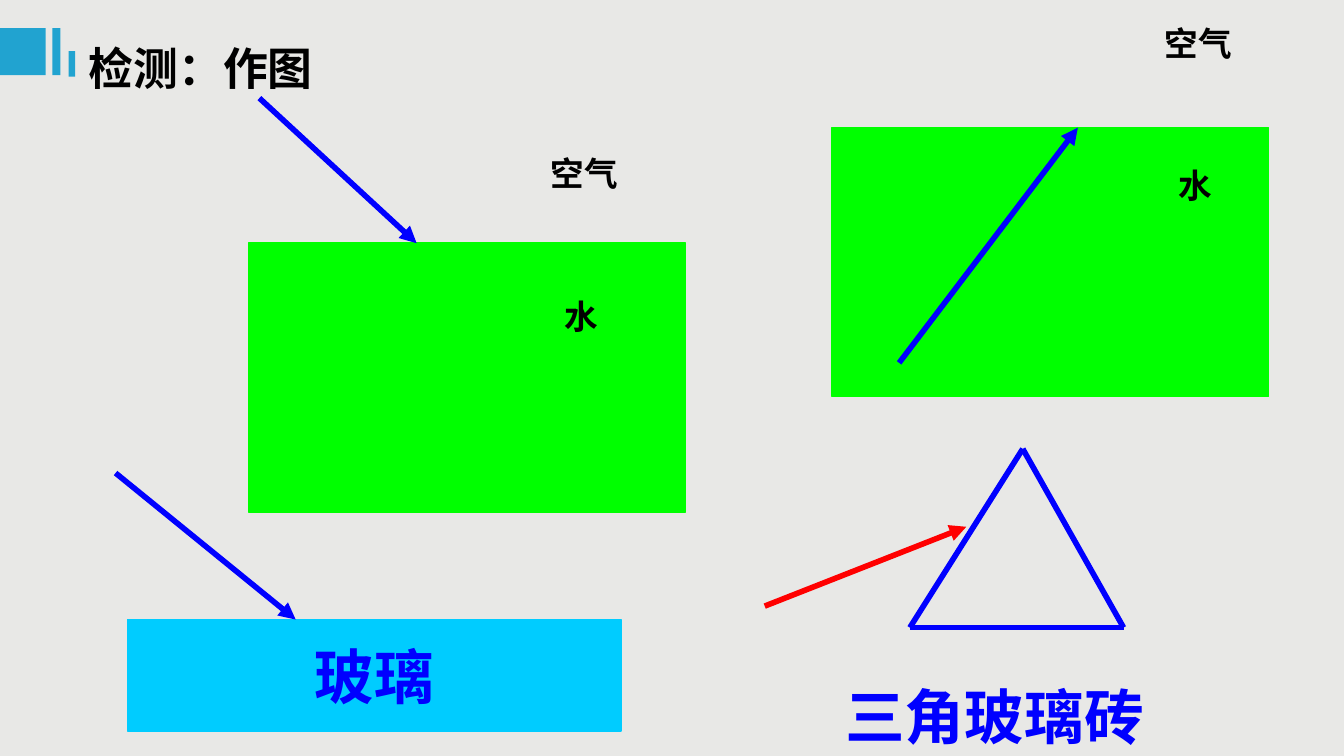
"""Build a slide of refraction drawing exercises."""
from dataclasses import dataclass
from itertools import combinations

from lxml import etree
from pptx import Presentation
from pptx import util as u
from pptx.dml.color import RGBColor
from pptx.enum import shapes, text
from pptx.oxml.ns import qn


@dataclass(frozen=True)
class Theme:
    """Colours, fonts and type sizes of the slide."""
    background: str = "E8E8E6"
    accent: str = "21A3D0"
    ink: str = "000000"
    water: str = "00FF00"
    glass: str = "00CCFF"
    blue: str = "0000FF"
    red: str = "FF0000"
    title_font: str = "Noto Sans CJK SC"
    font: str = "Arial"
    title_size: int = 24
    label_size: int = 18
    name_size: int = 32
    ray_width: int = 3
    edge_width: float = 0.75


THEME = Theme()
COLUMNS, ROWS = 100, 56.25
WIDTH = u.Inches(10)
HEIGHT = WIDTH * 9 // 16


def grid(column, row):
    """Turn a column and a row into slide lengths."""
    return round(WIDTH * column / COLUMNS), round(HEIGHT * row / ROWS)


def style_text(shape, words, size, color, font=THEME.font, align=text.PP_ALIGN.LEFT):
    """Write one bold paragraph into a shape."""
    frame = shape.text_frame
    frame.text = words
    paragraph = frame.paragraphs[0]
    paragraph.alignment = align
    run = paragraph.runs[0]
    run.font.size = u.Pt(size)
    run.font.bold = True
    run.font.name = font
    run.font.color.rgb = RGBColor.from_string(color)
    return run


def add_title(slide, words, box):
    """Place the title placeholder and set its East Asian font."""
    title = slide.shapes.title
    title.left, title.top = grid(*box[:2])
    title.width, title.height = grid(*box[2:])
    run = style_text(title, words, THEME.title_size, THEME.ink, THEME.title_font)
    title.text_frame.vertical_anchor = text.MSO_ANCHOR.TOP
    east_asian = etree.SubElement(run.font._element, qn("a:ea"))
    east_asian.set("typeface", THEME.title_font)


def add_block(slide, box, color, outlined=True):
    """Add a filled rectangle, with an edge of the same colour if outlined."""
    shape = slide.shapes.add_shape(
        shapes.MSO_SHAPE.RECTANGLE, *grid(*box[:2]), *grid(*box[2:]))
    shape.shadow.inherit = False
    shape.fill.solid()
    shape.fill.fore_color.rgb = RGBColor.from_string(color)
    if outlined:
        shape.line.color.rgb = RGBColor.from_string(color)
        shape.line.width = u.Pt(THEME.edge_width)
    else:
        shape.line.fill.background()
    return shape


def add_label(slide, words, box, size=THEME.label_size, color=THEME.ink):
    """Add an unwrapped text label."""
    label = slide.shapes.add_textbox(*grid(*box[:2]), *grid(*box[2:]))
    style_text(label, words, size, color)
    label.text_frame.word_wrap = False
    label.text_frame.auto_size = text.MSO_AUTO_SIZE.SHAPE_TO_FIT_TEXT


def add_line(slide, start, end, color=THEME.blue, arrow=True):
    """Draw a straight line, with an arrowhead at its end if wanted."""
    line = slide.shapes.add_connector(
        shapes.MSO_CONNECTOR.STRAIGHT, *grid(*start), *grid(*end))
    line.line.color.rgb = RGBColor.from_string(color)
    line.line.width = u.Pt(THEME.ray_width)
    properties = line._element.spPr
    if arrow:
        etree.SubElement(properties.find(qn("a:ln")), qn("a:tailEnd"), type="triangle")
    etree.SubElement(properties, qn("a:effectLst"))


def add_water_tank(slide, corner, air_corner, ray):
    """Add a water tank with its two medium labels and a light ray."""
    add_block(slide, (*corner, 32.5, 20), THEME.water)
    column, row = air_corner
    add_label(slide, "空气", (column, row, 7, 4))
    add_label(slide, "水", (column + 1, row + 10.6, 4.5, 4))
    add_line(slide, *ray)


def add_glass_slab(slide):
    """Add the glass slab and the ray that meets it."""
    slab = add_block(slide, (9.5, 46.1, 36.7, 8.3), THEME.glass)
    style_text(slab, "玻璃", THEME.name_size, THEME.blue, align=text.PP_ALIGN.CENTER)
    slab.text_frame.word_wrap = False
    slab.text_frame.vertical_anchor = text.MSO_ANCHOR.MIDDLE
    add_line(slide, (8.6, 35.2), (22, 46.1))


def add_prism(slide):
    """Add the triangular prism, its name and its red ray."""
    corners = (76.1, 33.4), (67.7, 46.7), (83.6, 46.7)
    for start, end in combinations(corners, 2):
        add_line(slide, start, end, arrow=False)
    add_label(slide, "三角玻璃砖", (61.9, 50.1, 24.4, 6.3), THEME.name_size, THEME.blue)
    add_line(slide, (56.9, 45.1), (71.9, 39.2), THEME.red)


def main():
    """Build and save the slide."""
    presentation = Presentation()
    presentation.slide_width, presentation.slide_height = WIDTH, HEIGHT
    slide = presentation.slides.add_slide(presentation.slide_layouts[5])
    slide.background.fill.solid()
    slide.background.fill.fore_color.rgb = RGBColor.from_string(THEME.background)
    for bar in ((0, 2.1, 3.4, 3.5), (3.9, 2.1, 0.6, 3.5), (5.1, 3.8, 0.5, 1.9)):
        add_block(slide, bar, THEME.accent, outlined=False)
    add_title(slide, "检测：作图", (5.6, 2.5, 22.7, 5))
    add_water_tank(slide, (18.5, 18.1), (40, 10.9), ((19.3, 7.3), (31, 18.1)))
    add_water_tank(slide, (61.9, 9.5), (85.7, 1.2), ((66.9, 27), (80.2, 9.5)))
    add_glass_slab(slide)
    add_prism(slide)
    presentation.save("out.pptx")


if __name__ == "__main__":
    main()
